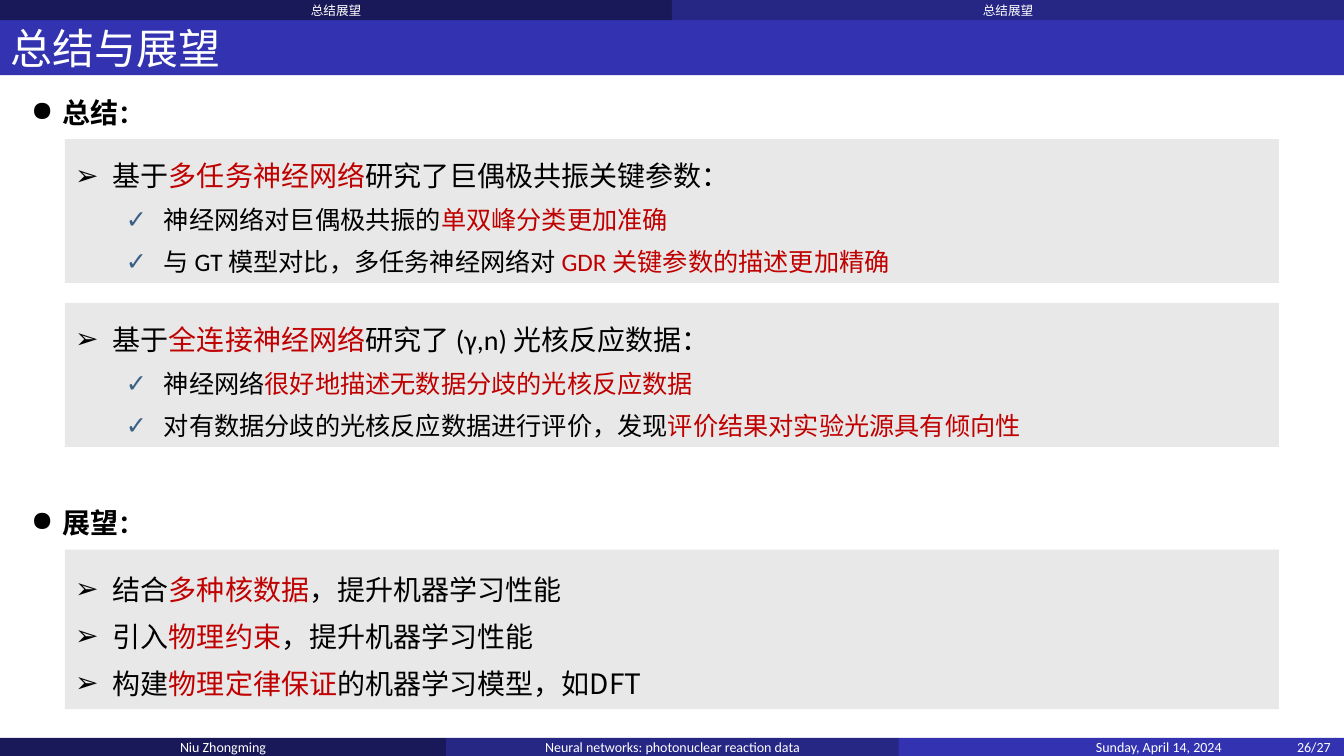
from lxml import etree
from pptx import Presentation
from pptx.dml.color import RGBColor
from pptx.enum.shapes import MSO_SHAPE
from pptx.enum.text import MSO_ANCHOR, MSO_AUTO_SIZE, PP_ALIGN
from pptx.oxml.ns import qn
from pptx.util import Pt

RECTANGLE = MSO_SHAPE.RECTANGLE
MIDDLE = MSO_ANCHOR.MIDDLE
LEFT, CENTER = PP_ALIGN.LEFT, PP_ALIGN.CENTER
NO_FIT, GROW = MSO_AUTO_SIZE.NONE, MSO_AUTO_SIZE.SHAPE_TO_FIT_TEXT

LATIN, CHINESE = "Calibri", "Noto Sans CJK SC"
COLORS = {
    "navy": "191959", "indigo": "262685", "blue": "3333B2", "white": "FFFFFF",
    "black": "000000", "red": "C00000", "gray": "D9D9D9", "check": "3A6086",
}
PAGE_WIDTH, PAGE_HEIGHT = 960, 540
HEADER_HEIGHT, FOOTER_TOP = 14.4, 527
PANEL_LEFT, PANEL_WIDTH = 46.4, 867.2

# Each level: bullet, bullet colour, left margin, hanging indent, text size
LEVELS = [("➢", "black", 27, 27, 20), ("✓", "check", 63.4, 27, 18)]

# Each panel: placeholder index, top, height, lines of (level, spans);
# a span is (text, colour, font), the last two optional
PANELS = [
    (1, 99.3, 102.8, [
        (0, [("基于",), ("多任务神经网络", "red"), ("研究了巨偶极共振关键参数：",)]),
        (1, [("神经网络对巨偶极共振的",), ("单双峰分类更加准确", "red")]),
        (1, [("与 ",), ("GT ", "black", LATIN), ("模型对比，多任务神经网络对 ",),
             ("GDR 关键参数", "red", LATIN), ("的描述更加精确", "red")]),
    ]),
    (2, 216.4, 102.8, [
        (0, [("基于",), ("全连接神经网络", "red"), ("研究了 ",),
             ("(γ,n) ", "black", LATIN), ("光核反应数据：",)]),
        (1, [("神经网络",), ("很好地描述无数据分歧的光核反应数据", "red")]),
        (1, [("对有数据分歧的光核反应数据进行评价，发现",),
             ("评价结果对实验光源具有倾向性", "red")]),
    ]),
    (4, 392.5, 114, [
        (0, [("结合",), ("多种核数据", "red"), ("，提升机器学习性能",)]),
        (0, [("引入",), ("物理约束", "red"), ("，提升机器学习性能",)]),
        (0, [("构建",), ("物理定律保证", "red"), ("的机器学习模型，如DFT",)]),
    ]),
]


def rgb(name):
    return RGBColor.from_string(COLORS[name])


def place(shape, left, top, width, height):
    shape.left, shape.top = Pt(left), Pt(top)
    shape.width, shape.height = Pt(width), Pt(height)


def paint(shape, color):
    shape.fill.solid()
    shape.fill.fore_color.rgb = rgb(color)


def set_font(para, size, color, latin=CHINESE, bold=False):
    font = para.font
    font.name, font.size, font.bold = latin, Pt(size), bold
    font.color.rgb = rgb(color)
    defaults = para._p.pPr.find(qn("a:defRPr"))
    etree.SubElement(defaults, qn("a:ea"), typeface=CHINESE)


def set_bullet(para, character, color, margin, hanging):
    properties = para._p.pPr
    properties.set("marL", str(Pt(margin)))
    properties.set("indent", str(-Pt(hanging)))
    defaults = properties.find(qn("a:defRPr"))
    bullet_color = etree.Element(qn("a:buClr"))
    etree.SubElement(bullet_color, qn("a:srgbClr"), val=COLORS[color])
    defaults.addprevious(bullet_color)
    defaults.addprevious(etree.Element(qn("a:buChar"), char=character))


def set_right_tabs(para, positions):
    tabs = etree.Element(qn("a:tabLst"))
    for position in positions:
        etree.SubElement(tabs, qn("a:tab"), pos=str(Pt(position)), algn="r")
    para._p.pPr.find(qn("a:defRPr")).addprevious(tabs)


def add_bar(page, left, top, width, height, color, text, size):
    bar = page.shapes.add_shape(RECTANGLE, Pt(left), Pt(top), Pt(width), Pt(height))
    bar.shadow.inherit = False
    paint(bar, color)
    bar.line.fill.background()
    bar.text_frame.vertical_anchor = MIDDLE
    para = bar.text_frame.paragraphs[0]
    para.text, para.alignment = text, CENTER
    set_font(para, size, "white", LATIN)
    return para


def fill_title(title, text):
    place(title, 0, HEADER_HEIGHT, PAGE_WIDTH, 39.2)
    paint(title, "blue")
    frame = title.text_frame
    frame.text, frame.auto_size, frame.vertical_anchor = text, NO_FIT, MIDDLE
    para = frame.paragraphs[0]
    para.alignment = LEFT
    set_font(para, 30, "white", LATIN)


def add_heading(page, top, width, height, text, spacing):
    box = page.shapes.add_textbox(Pt(15.1), Pt(top), Pt(width), Pt(height))
    box.text_frame.word_wrap = True
    box.text_frame.auto_size = GROW
    para = box.text_frame.paragraphs[0]
    para.line_spacing = spacing
    set_font(para, 20, "black", bold=True)
    set_bullet(para, "●", "black", 22.5, 22.5)
    para.add_run().text = text
    colon = para.add_run()
    colon.text, colon.font.size = "：", Pt(18)


def fill_panel(panel, top, height, lines):
    place(panel, PANEL_LEFT, top, PANEL_WIDTH, height)
    paint(panel, "gray")
    fill_color = panel._element.spPr.find(".//" + qn("a:srgbClr"))
    etree.SubElement(fill_color, qn("a:alpha"), val="60000")
    frame = panel.text_frame
    frame.auto_size, frame.vertical_anchor = NO_FIT, MIDDLE
    for number, (level, spans) in enumerate(lines):
        para = frame.add_paragraph() if number else frame.paragraphs[0]
        bullet, bullet_color, margin, hanging, size = LEVELS[level]
        para.level, para.line_spacing = level, 1.4
        para.space_before = Pt(0)
        set_font(para, size, "black")
        set_bullet(para, bullet, bullet_color, margin, hanging)
        for text, *style in spans:
            span = para.add_run()
            span.text = text
            if style:
                span.font.color.rgb = rgb(style[0])
            if len(style) > 1:
                span.font.name = style[1]


def main():
    deck = Presentation()
    deck.slide_width, deck.slide_height = Pt(PAGE_WIDTH), Pt(PAGE_HEIGHT)
    page = deck.slides.add_slide(deck.slide_layouts[4])
    holders = {holder.placeholder_format.idx: holder for holder in page.placeholders}

    # Section bars and title
    half = PAGE_WIDTH / 2
    for column, color in enumerate(("navy", "indigo")):
        add_bar(page, column * half, 0, half, HEADER_HEIGHT, color, "总结展望", 9)
    fill_title(page.shapes.title, "总结与展望")

    # Summary and outlook
    add_heading(page, 64.8, 96.5, 31.7, "总结", 1)
    add_heading(page, 343.4, 141.8, 41, "展望", 1.6)
    for index, top, height, lines in PANELS:
        fill_panel(holders[index], top, height, lines)
    unused = holders[3]._element
    unused.getparent().remove(unused)

    # Footer
    footer = [
        (0, 318.6, "navy", "Niu Zhongming"),
        (318.6, 323.4, "indigo", "Neural networks: photonuclear reaction data"),
        (642, 318, "blue", "\tSunday, April 14, 2024\t26/27"),
    ]
    for left, width, color, text in footer:
        para = add_bar(page, left, FOOTER_TOP, width, PAGE_HEIGHT - FOOTER_TOP,
                       color, text, 10)
    para.alignment = LEFT
    set_right_tabs(para, (223.5, 301.5))

    deck.save("out.pptx")


if __name__ == "__main__":
    main()
